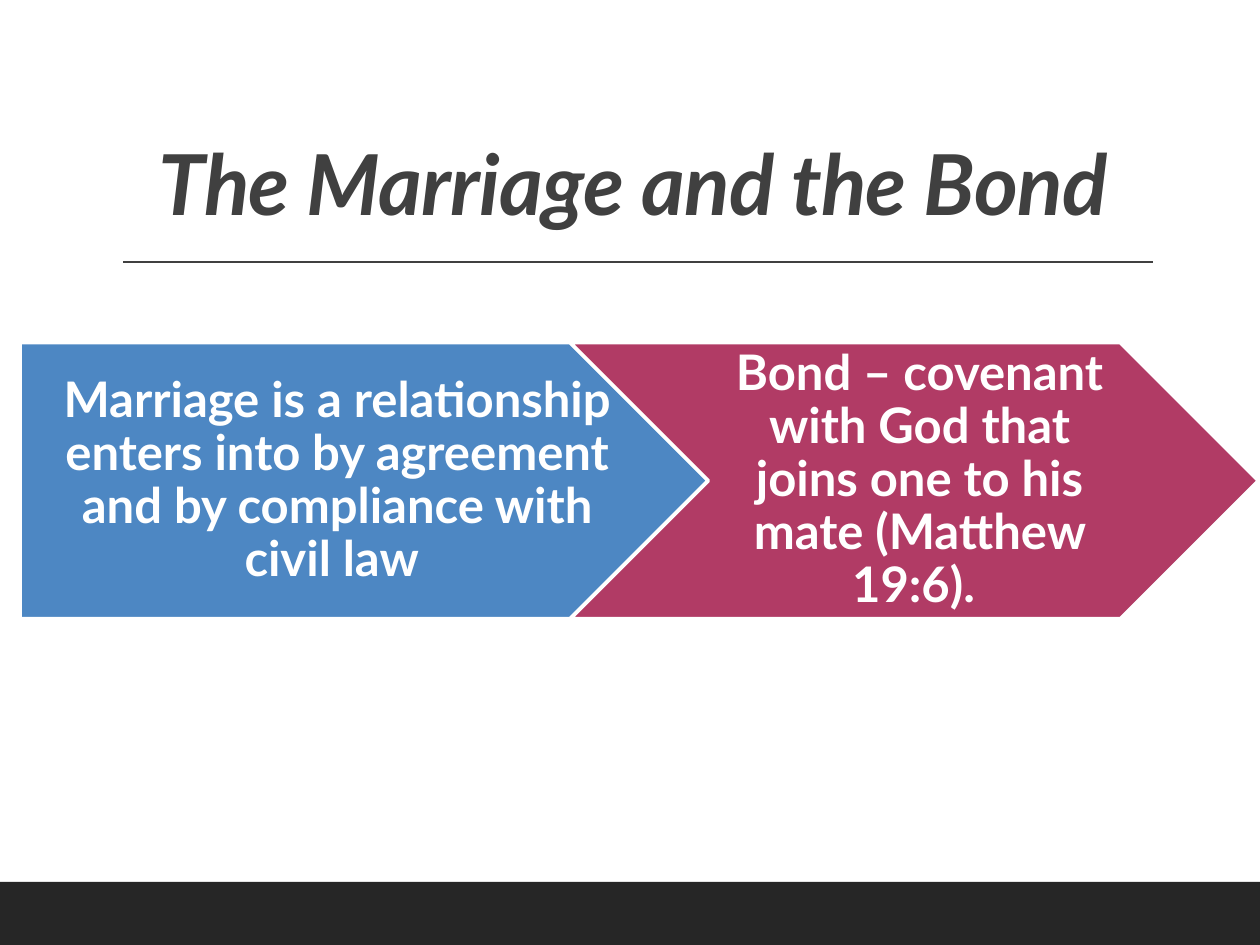
from dataclasses import dataclass

from lxml import etree
from pptx import Presentation
from pptx.dml.color import RGBColor
from pptx.enum.shapes import MSO_CONNECTOR, MSO_SHAPE
from pptx.enum.text import MSO_ANCHOR, PP_ALIGN
from pptx.oxml.ns import qn
from pptx.util import Inches, Pt


@dataclass(frozen=True)
class Theme:
    font: str = "Lato"
    dark: RGBColor = RGBColor(0x40, 0x40, 0x40)
    footer: RGBColor = RGBColor(0x26, 0x26, 0x26)
    blue: RGBColor = RGBColor(0x4D, 0x87, 0xC3)
    red: RGBColor = RGBColor(0xB1, 0x3B, 0x65)
    white: RGBColor = RGBColor(0xFF, 0xFF, 0xFF)
    title_size: Pt = Pt(48)
    body_size: Pt = Pt(28)


theme = Theme()


def add_block(slide, kind, left, top, width, height, fill):
    sp = slide.shapes.add_shape(kind, Inches(left), Inches(top), Inches(width), Inches(height))
    sp.shadow.inherit = False
    sp.fill.solid()
    sp.fill.fore_color.rgb = fill
    sp.line.fill.background()
    return sp


def write_text(sp, text, size, color, anchor):
    tf = sp.text_frame
    tf.word_wrap = True
    tf.vertical_anchor = anchor
    p = tf.paragraphs[0]
    p.text = text
    p.alignment = PP_ALIGN.CENTER
    p.line_spacing = 0.9
    r = p.runs[0]
    r.font.name = theme.font
    r.font.size = size
    r.font.bold = True
    r.font.color.rgb = color
    return r


prs = Presentation()
prs.slide_width, prs.slide_height = Inches(10), Inches(7.5)
s = prs.slides.add_slide(prs.slide_layouts[6])

# Footer band
add_block(s, MSO_SHAPE.RECTANGLE, 0, 7, 10, 0.5, theme.footer)

# Rule under the title
rule = s.shapes.add_connector(
    MSO_CONNECTOR.STRAIGHT, Inches(0.98), Inches(2.08), Inches(9.15), Inches(2.08))
rule.line.color.rgb = theme.dark
rule.line.width = Pt(1)
etree.SubElement(rule._element.spPr, qn("a:effectLst"))

# Title
title = s.shapes.add_textbox(Inches(0.9), Inches(0.31), Inches(8.25), Inches(1.59))
r = write_text(title, "The Marriage and the Bond", theme.title_size, theme.dark, MSO_ANCHOR.BOTTOM)
r.font.italic = True
r._r.get_or_add_rPr().set("spc", "-40")

# Process arrows: each starts 80% of a width after the one before
arrow_left, arrow_top, arrow_width, arrow_height = 0.16, 2.72, 5.46, 2.19
arrows = [
    (MSO_SHAPE.PENTAGON, theme.blue, 0.16,
     "Marriage is a relationship enters into by agreement and by compliance with civil law "),
    (MSO_SHAPE.CHEVRON, theme.red, 0.12,
     "Bond – covenant with God that joins one to his mate (Matthew 19:6). "),
]
for i, (kind, fill, inset, text) in enumerate(arrows):
    left = arrow_left + i * 0.8 * arrow_width
    sp = add_block(s, kind, left, arrow_top, arrow_width, arrow_height, fill)
    sp.line.color.rgb = theme.white
    sp.line.width = Pt(2)
    tf = sp.text_frame
    tf.margin_left, tf.margin_right = Inches(inset), Inches(0.04)
    tf.margin_top = tf.margin_bottom = Inches(0.08)
    write_text(sp, text, theme.body_size, theme.white, MSO_ANCHOR.MIDDLE)

prs.save("out.pptx")
